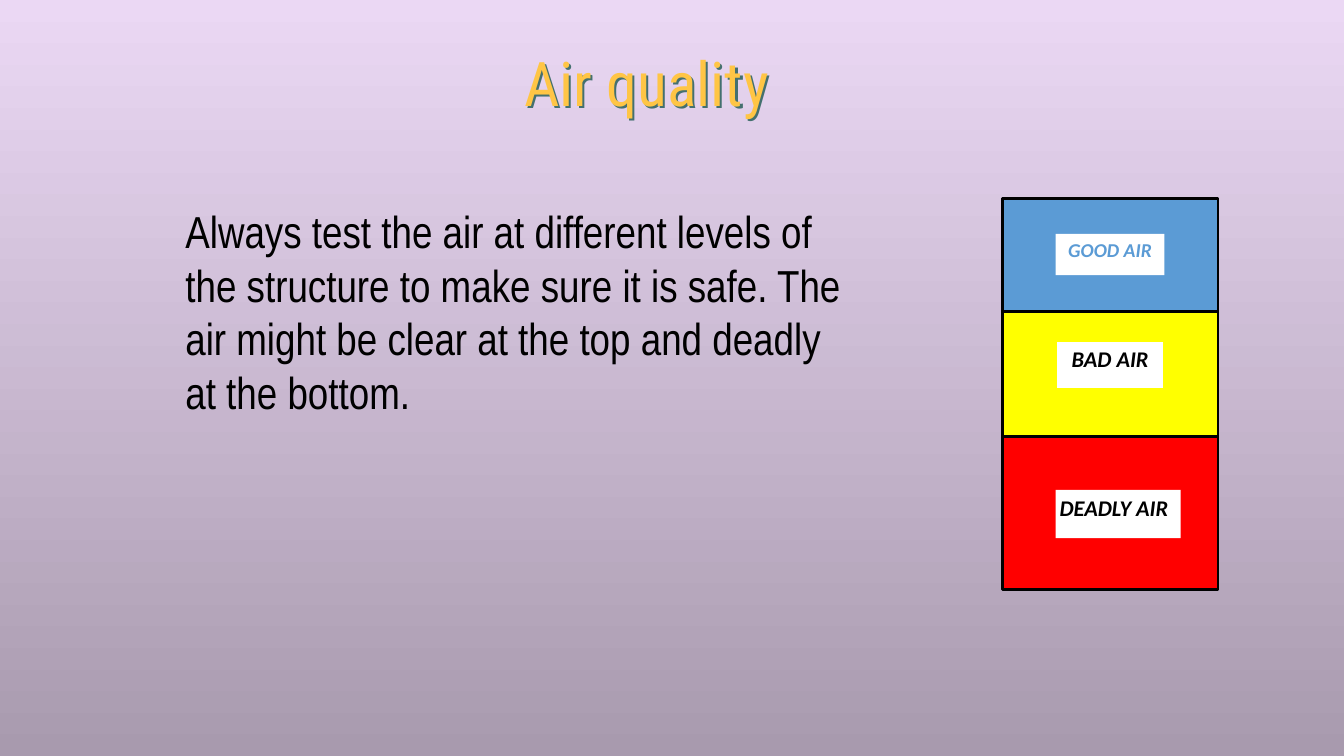
from dataclasses import dataclass

from lxml import etree
from pptx import Presentation
from pptx import util as u
from pptx.dml.color import RGBColor
from pptx.enum import shapes, text
from pptx.oxml.ns import qn


@dataclass(frozen=True)
class Theme:
    sky: str = "EBD8F4"
    dusk: str = "A89AAE"
    gold: str = "FFC545"
    shade: str = "44706F"
    blue: str = "5B9BD5"
    yellow: str = "FFFF00"
    red: str = "FF0000"
    black: str = "000000"
    white: str = "FFFFFF"
    title_font: str = "Roboto Condensed"
    body_font: str = "Arial Narrow"
    label_font: str = "Calibri"
    title_size: int = 44
    body_size: int = 32
    label_size: int = 16
    small_label_size: int = 14


class SlideBuilder:
    """Draws styled elements on the current slide."""

    def __init__(self, presentation, theme):
        self.theme = theme
        self.slide = presentation.slides.add_slide(presentation.slide_layouts[6])

    def background(self):
        fill = self.slide.background.fill
        fill.gradient()
        fill.gradient_angle = 270
        for stop, color in zip(fill.gradient_stops, (self.theme.sky, self.theme.dusk)):
            stop.color.rgb = RGBColor.from_string(color)

    def box(self, left, top, width, height, color, line=None):
        shape = self.slide.shapes.add_shape(
            shapes.MSO_SHAPE.RECTANGLE, *map(u.Inches, (left, top, width, height)))
        shape.shadow.inherit = False
        shape.fill.solid()
        shape.fill.fore_color.rgb = RGBColor.from_string(color)
        if line:
            shape.line.color.rgb = RGBColor.from_string(line)
            shape.line.width = u.Pt(2)
        else:
            shape.line.fill.background()
        return shape

    def set_text(self, shape, words, color, align=text.PP_ALIGN.LEFT, frame=None, **font):
        text_frame = shape.text_frame
        frame_format = {"word_wrap": True, "vertical_anchor": text.MSO_ANCHOR.TOP}
        for name, value in (frame_format | (frame or {})).items():
            setattr(text_frame, name, value)
        paragraph = text_frame.paragraphs[0]
        paragraph.alignment = align
        run = paragraph.add_run()
        run.text = words
        for name, value in font.items():
            setattr(run.font, name, value)
        run.font.color.rgb = RGBColor.from_string(color)

    def text_box(self, left, top, width, height, words, color, **style):
        shape = self.slide.shapes.add_textbox(*map(u.Inches, (left, top, width, height)))
        self.set_text(shape, words, color, **style)
        return shape

    def label(self, left, top, width, height, words, color, size, align, line=None):
        shape = self.box(left, top, width, height, self.theme.white, line)
        sides = ("left", "top", "right", "bottom")
        margins = {f"margin_{side}": u.Inches(0.04) for side in sides}
        self.set_text(shape, words, color, align, margins, name=self.theme.label_font,
                      size=u.Pt(size), bold=True, italic=True)

    def cast_shadow(self, shape, color):
        effects = etree.SubElement(shape.element.spPr, qn("a:effectLst"))
        shadow = etree.SubElement(effects, qn("a:outerShdw"), dist=str(u.Inches(0.03)),
                                  dir="2700000", algn="tl", rotWithShape="0")
        etree.SubElement(shadow, qn("a:srgbClr"), val=color)


def main():
    presentation = Presentation()
    presentation.slide_width = u.Inches(13.33)
    presentation.slide_height = u.Inches(7.5)
    theme = Theme()
    builder = SlideBuilder(presentation, theme)
    builder.background()

    center, left = text.PP_ALIGN.CENTER, text.PP_ALIGN.LEFT
    layers = [
        (theme.blue, 1.12, 0.35, (1.08, 0.41), "GOOD AIR", theme.blue,
         theme.small_label_size, center, None),
        (theme.yellow, 1.24, 0.29, (1.08, 0.48), "BAD AIR", theme.black,
         theme.label_size, center, theme.yellow),
        (theme.red, 1.52, 0.53, (1.24, 0.48), "DEADLY AIR", theme.black,
         theme.label_size, left, None),
    ]
    top = 1.97
    for fill, height, drop, label_area, *label_style in layers:
        builder.box(9.94, top, 2.14, height, fill, theme.black)
        builder.label(10.47, top + drop, *label_area, *label_style)
        top += height

    builder.text_box(
        1.74, 1.97, 6.88, 2.26,
        "Always test the air at different levels of the structure to make sure it is safe. "
        "The air might be clear at the top and deadly at the bottom.",
        theme.black, frame={"auto_size": text.MSO_AUTO_SIZE.SHAPE_TO_FIT_TEXT},
        name=theme.body_font, size=u.Pt(theme.body_size))
    title = builder.text_box(
        0.75, 0.19, 11.33, 1.25, "Air quality", theme.gold, align=center,
        frame={"vertical_anchor": text.MSO_ANCHOR.MIDDLE},
        name=theme.title_font, size=u.Pt(theme.title_size))
    builder.cast_shadow(title, theme.shade)
    presentation.save("out.pptx")


if __name__ == "__main__":
    main()
